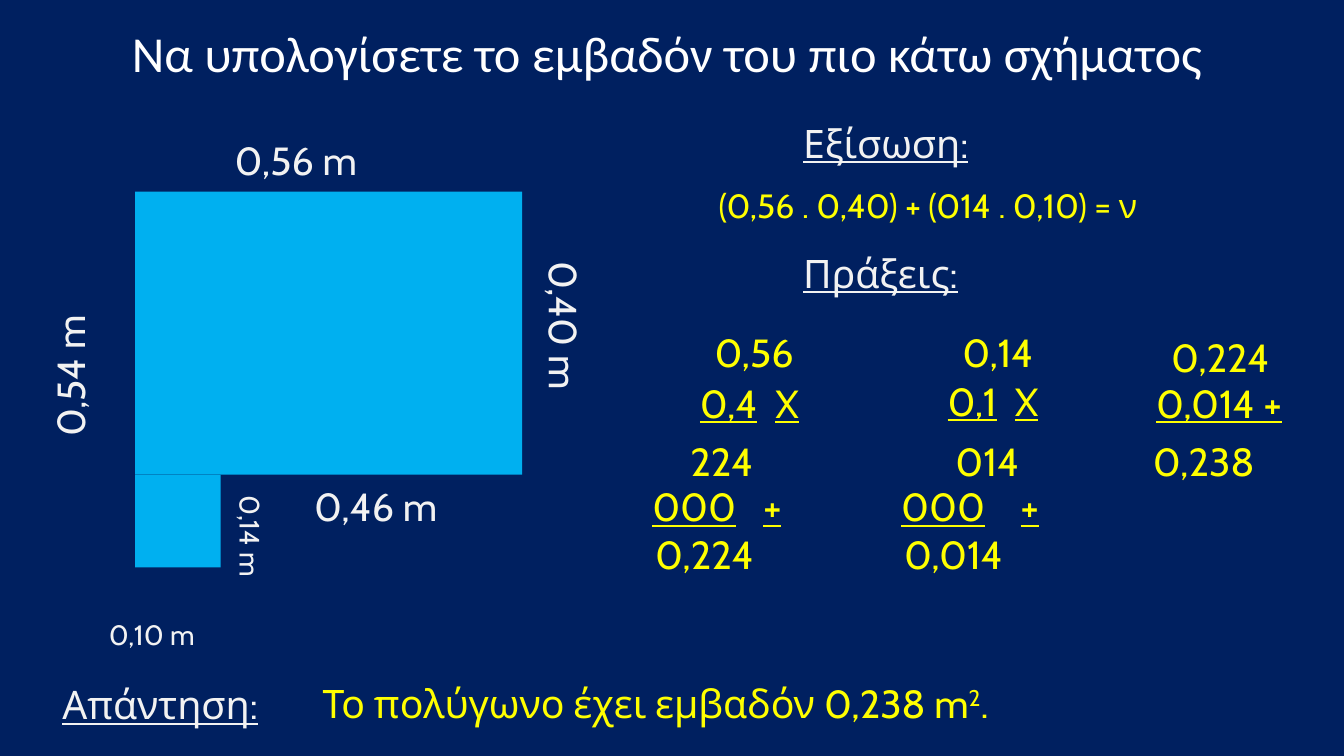
from dataclasses import dataclass

from lxml.etree import SubElement
from pptx import Presentation
from pptx.dml.color import RGBColor
from pptx.enum.shapes import MSO_SHAPE
from pptx.enum.text import MSO_AUTO_SIZE
from pptx.oxml.ns import qn
from pptx.util import Pt


@dataclass(frozen=True)
class Theme:
    background: RGBColor = RGBColor(0x00, 0x20, 0x60)
    figure: RGBColor = RGBColor(0x00, 0xB0, 0xF0)
    title: RGBColor = RGBColor(0xFF, 0xFF, 0xFF)
    label: RGBColor = RGBColor(0xF2, 0xF2, 0xF2)
    working: RGBColor = RGBColor(0xFF, 0xFF, 0x00)
    title_font: str = "Calibri"
    body_font: str = "Cabin"
    title_size: int = 36
    body_size: int = 28
    equation_size: int = 24
    small_size: int = 20


theme = Theme()


def add_text(text, left, top, width, color, size=theme.body_size,
             font=theme.body_font, underline=None, rotation=0):
    shape = slide.shapes.add_textbox(Pt(left), Pt(top), Pt(width), Pt(size * 1.2 + 7.2))
    shape.rotation = rotation
    frame = shape.text_frame
    frame.word_wrap = True
    frame.auto_size = MSO_AUTO_SIZE.SHAPE_TO_FIT_TEXT
    frame.text = text
    paragraph = frame.paragraphs[0]
    for run in paragraph.runs:
        style_run(run, color, size, font, underline)
    return paragraph


def style_run(run, color, size, font, underline=None):
    run.font.name = font
    run.font.size = Pt(size)
    run.font.color.rgb = color
    run.font.underline = underline


presentation = Presentation()
presentation.slide_width = Pt(960)
presentation.slide_height = Pt(540)
slide = presentation.slides.add_slide(presentation.slide_layouts[6])
slide.background.fill.solid()
slide.background.fill.fore_color.rgb = theme.background

add_text("Να υπολογίσετε το εμβαδόν του πιο κάτω σχήματος", 87.1, 12.2, 830,
         theme.title, theme.title_size, theme.title_font)

figure_left, figure_top, large_height = 96.5, 136.8, 202.3
for top, width, height in [
    (figure_top, 276.5, large_height),
    (figure_top + large_height, 61.2, 66.2),
]:
    rectangle = slide.shapes.add_shape(
        MSO_SHAPE.RECTANGLE, Pt(figure_left), Pt(top), Pt(width), Pt(height))
    rectangle.shadow.inherit = False
    rectangle.fill.solid()
    rectangle.fill.fore_color.rgb = theme.figure
    rectangle.line.fill.background()

for text, left, top, width, size, rotation in [
    ("0,56 m", 160.6, 93.6, 155.5, theme.body_size, 0),
    ("0,46 m", 217.4, 341.3, 155.5, theme.body_size, 0),
    ("0,54 m", -28.1, 221, 155.5, theme.body_size, 270),
    ("0,40 m", 325.4, 236.9, 155.5, theme.body_size, 90),
    ("0,14 m", 129.6, 380.9, 99, theme.small_size, 90),
    ("0,10 m", 70.6, 437.8, 99, theme.small_size, 0),
]:
    add_text(text, left, top, width, theme.label, size, rotation=rotation)

for text, left, top, width in [
    ("Εξίσωση:", 566.6, 81.4, 155.5),
    ("Πράξεις:", 566.6, 174.2, 155.5),
    ("Απάντηση:", 37.4, 482.4, 201),
]:
    add_text(text, left, top, width, theme.label, underline=True)

add_text("(0,56 . 0,40) + (014 . 0,10) = ν", 506.3, 128.6, 443,
         theme.working, theme.equation_size)

result_top, partial_top, total_top = 308.9, 341.3, 375.1
for text, left, top in [
    ("0,56", 503.3, 231.1),
    ("224", 486.1, result_top),
    ("0,224", 460.9, total_top),
    ("0,14", 680.4, 231.1),
    ("014", 675.4, result_top),
    ("0,014", 638.7, total_top),
    ("0,224", 829.4, 234.7),
    ("0,238", 816.5, result_top),
]:
    add_text(text, left, top, 120, theme.working)

for text, left, top, tab_stops in [
    ("\t0,4\tX", 455.8, 267.1, (37, 91)),
    ("\t000\t+", 434.2, partial_top, (24.6, 104)),
    ("\t0,1\tX", 632.9, 265.7, (37, 85)),
    ("\t000\t+", 612, partial_top, (24.6, 110)),
    ("\t0,014 +", 806.4, 267.1, (12.3,)),
]:
    paragraph = add_text(text, left, top, 165, theme.working, underline=True)
    properties = paragraph._p.get_or_add_pPr()
    tab_list = SubElement(properties, qn("a:tabLst"))
    for position in tab_stops:
        SubElement(tab_list, qn("a:tab"), pos=str(int(Pt(position))), algn="l")

answer = add_text("Το πολύγωνο έχει εμβαδόν 0,238 m", 223.3, 481.7, 634, theme.working)
for text, baseline in [("2", "30000"), (".", "0")]:
    run = answer.add_run()
    run.text = text
    style_run(run, theme.working, theme.body_size, theme.body_font)
    run._r.get_or_add_rPr().set("baseline", baseline)

presentation.save("out.pptx")
